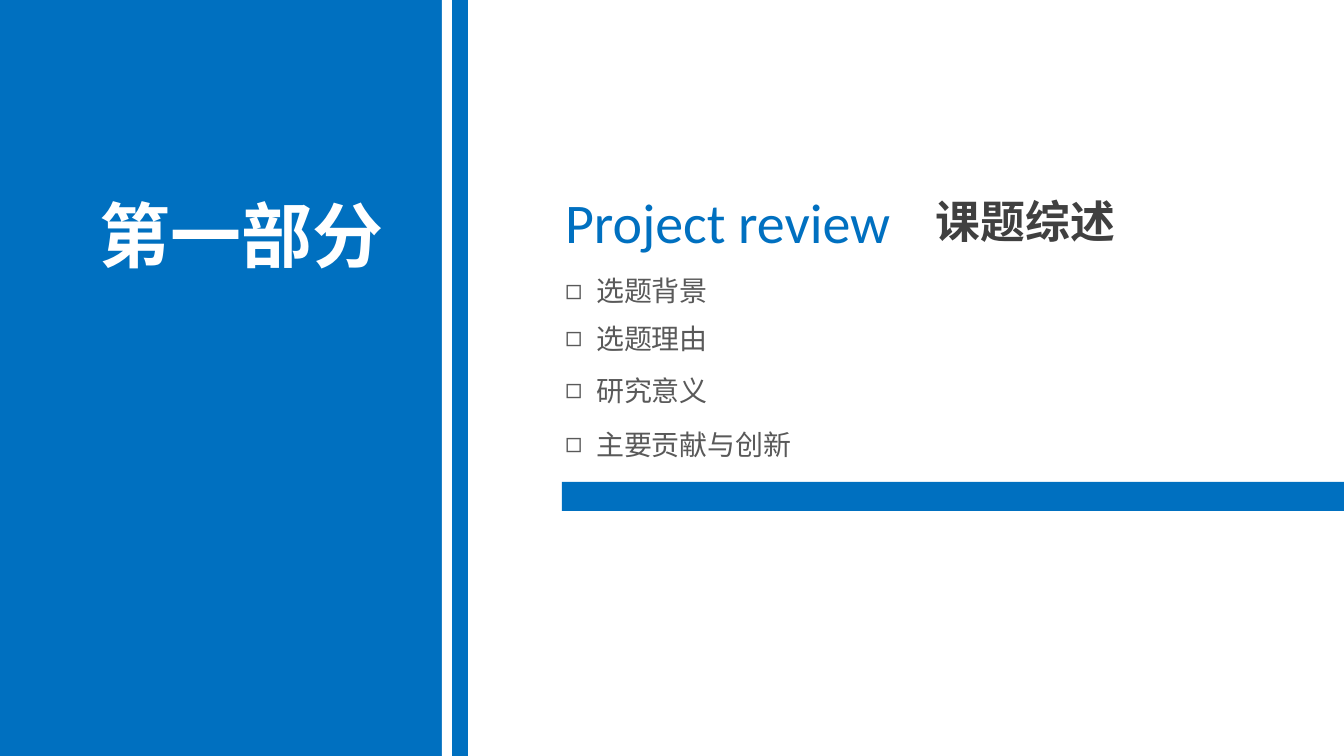
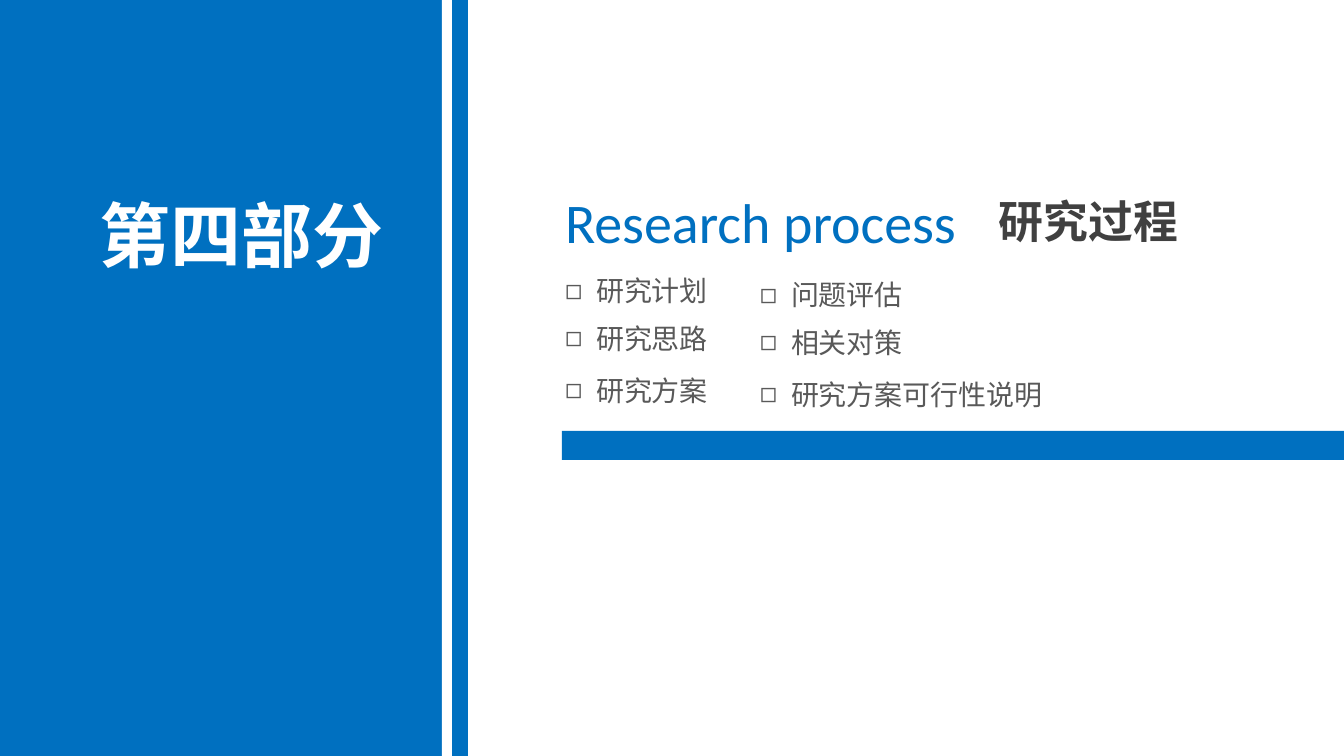
"""Builds two section divider slides with a blue side band and bulleted contents."""
from dataclasses import dataclass

from lxml.etree import SubElement
from pptx import Presentation
from pptx.dml.color import RGBColor
from pptx.enum.shapes import MSO_SHAPE as Shape
from pptx.enum.text import MSO_ANCHOR as Anchor, MSO_AUTO_SIZE as AutoSize, PP_ALIGN as Align
from pptx.oxml.ns import qn
from pptx.slide import Slide
from pptx.util import Emu, Pt

SLIDE_W, SLIDE_H = 1344, 756
EMU_PER_PX = 9144000 / SLIDE_W
FONT = "Calibri"
COLORS = {"blue": "0070C0", "white": "FFFFFF", "dark": "404040", "gray": "595959"}
LAYOUT_BY_COLUMNS = {1: 1, 2: 3}
ROW_GAPS = (0, 14, 18, 21)
ROW_H = 34
CHAR_W = 28
BULLET_INDENT = 31
INSET_X, INSET_Y = 10, 5


@dataclass(frozen=True)
class Box:
    left: int
    top: int
    width: int
    height: int


@dataclass(frozen=True)
class Column:
    left: int
    top: int
    items: tuple[str, ...]

    @property
    def box(self) -> Box:
        width = 2 * CHAR_W + CHAR_W * max(map(len, self.items))
        height = 2 * INSET_Y + sum(ROW_H + gap for gap in ROW_GAPS[:len(self.items)])
        return Box(self.left, self.top, width, height)


@dataclass(frozen=True)
class Section:
    heading: str
    english: str
    english_w: int
    chinese: str
    chinese_left: int
    columns: tuple[Column, ...]
    bar_top: int


WHITE_PANELS = (Box(468, 0, 876, SLIDE_H), Box(442, 0, 10, SLIDE_H))
HEADING_BOX = Box(58, 187, 368, 97)
SECTIONS = (
    Section("第一部分", "Project review", 355, "课题综述", 926,
            (Column(555, 269, ("选题背景", "选题理由", "研究意义", "主要贡献与创新")),), 482),
    Section("第四部分", "Research process", 415, "研究过程", 989,
            (Column(555, 269, ("研究计划", "研究思路", "研究方案")),
             Column(750, 273, ("问题评估", "相关对策", "研究方案可行性说明"))), 431),
)


def px(n: float) -> Emu:
    """Turn px into EMU."""
    return Emu(round(n * EMU_PER_PX))


def rgb(name: str) -> RGBColor:
    """Look up a named colour."""
    return RGBColor.from_string(COLORS[name])


def add_rect(s: Slide, box: Box, color: str) -> None:
    """Draw a plain filled rectangle."""
    sp = s.shapes.add_shape(Shape.RECTANGLE, px(box.left), px(box.top), px(box.width), px(box.height))
    sp.shadow.inherit = False
    sp.fill.solid()
    sp.fill.fore_color.rgb = rgb(color)
    sp.line.fill.background()


def place(sp, box: Box) -> None:
    """Move a placeholder to its box, in front of what is drawn so far."""
    sp.left, sp.top, sp.width, sp.height = px(box.left), px(box.top), px(box.width), px(box.height)
    sp.element.getparent().append(sp.element)


def add_label(s: Slide, box: Box, text: str, **style) -> None:
    """Add a text box with one formatted line."""
    sp = s.shapes.add_textbox(px(box.left), px(box.top), px(box.width), px(box.height))
    set_text(sp, text, **style)


def set_text(sp, *lines: str, size: int, color: str, bold: bool = False,
             align: Align = Align.LEFT, bullet: str = "") -> None:
    """Fill a shape with formatted paragraphs."""
    tf = sp.text_frame
    tf.word_wrap = True
    tf.auto_size = AutoSize.NONE
    tf.vertical_anchor = Anchor.TOP
    tf.margin_left = tf.margin_right = px(INSET_X)
    tf.margin_top = tf.margin_bottom = px(INSET_Y)
    for i, (line, gap) in enumerate(zip(lines, ROW_GAPS)):
        p = tf.paragraphs[0] if i == 0 else tf.add_paragraph()
        p.alignment = align
        p.space_before = Pt(round(px(gap).pt, 1))
        r = p.add_run()
        r.text = line
        r.font.size, r.font.bold, r.font.name = Pt(size), bold, FONT
        r.font.color.rgb = rgb(color)
        SubElement(r._r.get_or_add_rPr(), qn("a:ea"), typeface=FONT)
        if bullet:
            pPr = p._p.get_or_add_pPr()
            pPr.set("marL", str(px(BULLET_INDENT)))
            pPr.set("indent", str(-px(BULLET_INDENT)))
            SubElement(pPr, qn("a:buFont"), typeface=FONT)
            SubElement(pPr, qn("a:buChar"), char=bullet)


def add_section(prs: Presentation, section: Section) -> None:
    """Add one section divider slide."""
    layout = prs.slide_layouts[LAYOUT_BY_COLUMNS[len(section.columns)]]
    s = prs.slides.add_slide(layout)
    s.background.fill.solid()
    s.background.fill.fore_color.rgb = rgb("blue")
    title, *bodies = list(s.placeholders)
    for panel in WHITE_PANELS:
        add_rect(s, panel, "white")
    place(title, HEADING_BOX)
    set_text(title, section.heading, size=38, color="white", bold=True, align=Align.CENTER)
    for body, column in zip(bodies, section.columns):
        place(body, column.box)
        set_text(body, *column.items, size=15, color="gray", bullet="◻")
    add_label(s, Box(555, 183, section.english_w, 78), section.english, size=30, color="blue")
    add_label(s, Box(section.chinese_left, 189, 202, 65), section.chinese,
              size=24, color="dark", bold=True)
    add_rect(s, Box(562, section.bar_top, 782, 29), "blue")


def main() -> None:
    """Build and save the deck."""
    prs = Presentation()
    prs.slide_width, prs.slide_height = px(SLIDE_W), px(SLIDE_H)
    for section in SECTIONS:
        add_section(prs, section)
    prs.save("out.pptx")


if __name__ == "__main__":
    main()
